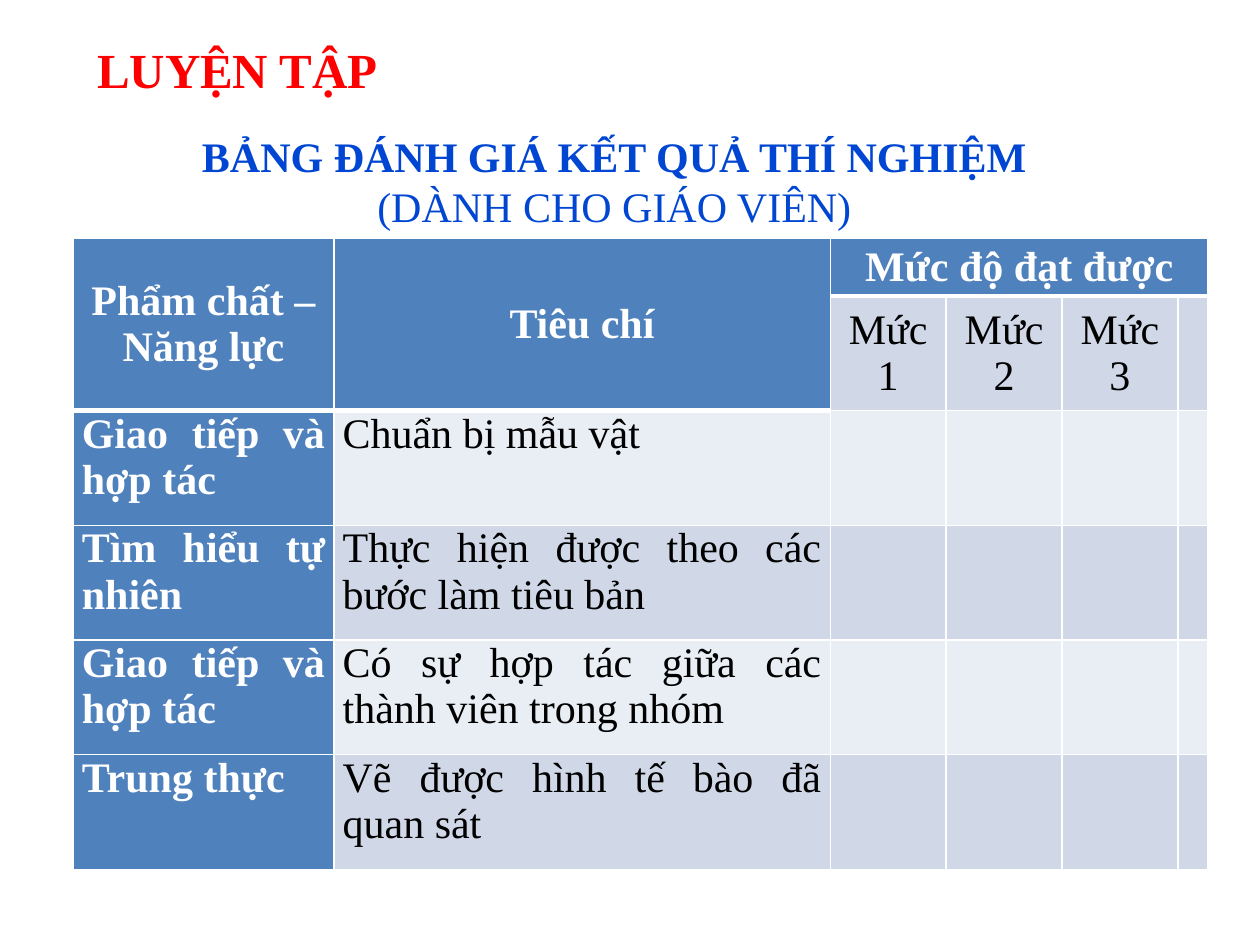
from pptx import Presentation
from pptx.dml.color import RGBColor
from pptx.enum.text import MSO_ANCHOR, PP_ALIGN
from pptx.oxml import parse_xml
from pptx.oxml.ns import nsdecls
from pptx.util import Inches, Pt

FONT = "Times New Roman"
WHITE, BLACK, BLUE, RED = "FFFFFF", "000000", "0046D2", "FF0000"
HEAD, DARK, LIGHT = "4F81BD", "D0D8E8", "E9EDF4"

TITLE = "LUYỆN TẬP"
LINES = [("BẢNG ĐÁNH GIÁ KẾT QUẢ THÍ NGHIỆM", True), ("(DÀNH CHO GIÁO VIÊN)", False)]
ROWS = [
    ["Phẩm chất – Năng lực", "Tiêu chí", "Mức độ đạt được", "", "", ""],
    ["", "", "Mức 1", "Mức 2", "Mức 3", ""],
    ["Giao tiếp và hợp tác", "Chuẩn bị mẫu vật", "", "", "", ""],
    ["Tìm hiểu tự nhiên", "Thực hiện được theo các bước làm tiêu bản", "", "", "", ""],
    ["Giao tiếp và hợp tác", "Có sự hợp tác giữa các thành viên trong nhóm", "", "", "", ""],
    ["Trung thực", "Vẽ được hình tế bào đã quan sát", "", "", "", ""],
]
WIDTHS = [2.07, 3.94, 0.92, 0.92, 0.92, 0.14]
HEIGHTS = [0.46] + [0.91] * 5
MERGES = [((0, 0), (1, 0)), ((0, 1), (1, 1)), ((0, 2), (0, 5))]


def color(code):
    return RGBColor.from_string(code)


def style(par, size, code, bold, align):
    par.alignment = align
    font = par.font
    font.name, font.size, font.bold = FONT, Pt(size), bold
    font.color.rgb = color(code)


def edge(cell, side, width):
    props = cell._tc.get_or_add_tcPr()
    props.append(parse_xml(
        f'<a:ln{side} {nsdecls("a")} w="{Pt(width)}"><a:solidFill>'
        f'<a:srgbClr val="{WHITE}"/></a:solidFill></a:ln{side}>'))


def format_cell(cell, row, col, text):
    header = row == 0 or (row == 1 and col < 2)
    strong = header or col == 0
    for side in "LRT":
        edge(cell, side, 1)
    edge(cell, "B", 3 if header else 1)
    cell.fill.solid()
    cell.fill.fore_color.rgb = color(HEAD if strong else DARK if row % 2 else LIGHT)
    if not text:
        return
    cell.text = text
    cell.margin_left = cell.margin_right = Inches(0.07)
    cell.margin_top = cell.margin_bottom = 0
    cell.vertical_anchor = MSO_ANCHOR.MIDDLE if row < 2 else MSO_ANCHOR.TOP
    par = cell.text_frame.paragraphs[0]
    par.space_after = Pt(3)
    style(par, 24, WHITE if strong else BLACK, strong,
          PP_ALIGN.CENTER if row < 2 else PP_ALIGN.JUSTIFY)


def add_grid(slide):
    grid = slide.shapes.add_table(
        len(ROWS), len(WIDTHS), Inches(0.58), Inches(1.89),
        Inches(sum(WIDTHS)), Inches(sum(HEIGHTS))).table
    for col, width in zip(grid.columns, WIDTHS):
        col.width = Inches(width)
    for row, height in zip(grid.rows, HEIGHTS):
        row.height = Inches(height)
    for start, end in MERGES:
        grid.cell(*start).merge(grid.cell(*end))
    for r, row in enumerate(ROWS):
        for c, text in enumerate(row):
            format_cell(grid.cell(r, c), r, c, text)


def add_heading(slide):
    box = slide.shapes.add_textbox(Inches(0.25), Inches(0.98), Inches(9.25), Inches(0.91))
    frame = box.text_frame
    frame.word_wrap = True
    frame.vertical_anchor = MSO_ANCHOR.MIDDLE
    frame.text = "\n".join(text for text, _ in LINES)
    for par, (_, bold) in zip(frame.paragraphs, LINES):
        style(par, 24, BLUE, bold, PP_ALIGN.CENTER)


def set_title(slide):
    title = slide.shapes.title
    title.left, title.top = Inches(0.67), Inches(0.26)
    title.width, title.height = Inches(2.67), Inches(0.57)
    title.text = TITLE
    title.text_frame.vertical_anchor = MSO_ANCHOR.TOP
    style(title.text_frame.paragraphs[0], 28, RED, True, PP_ALIGN.LEFT)


def main():
    deck = Presentation()
    deck.slide_width, deck.slide_height = Inches(10), Inches(7.5)
    slide = deck.slides.add_slide(deck.slide_layouts[5])
    set_title(slide)
    add_heading(slide)
    add_grid(slide)
    deck.save("out.pptx")


if __name__ == "__main__":
    main()
